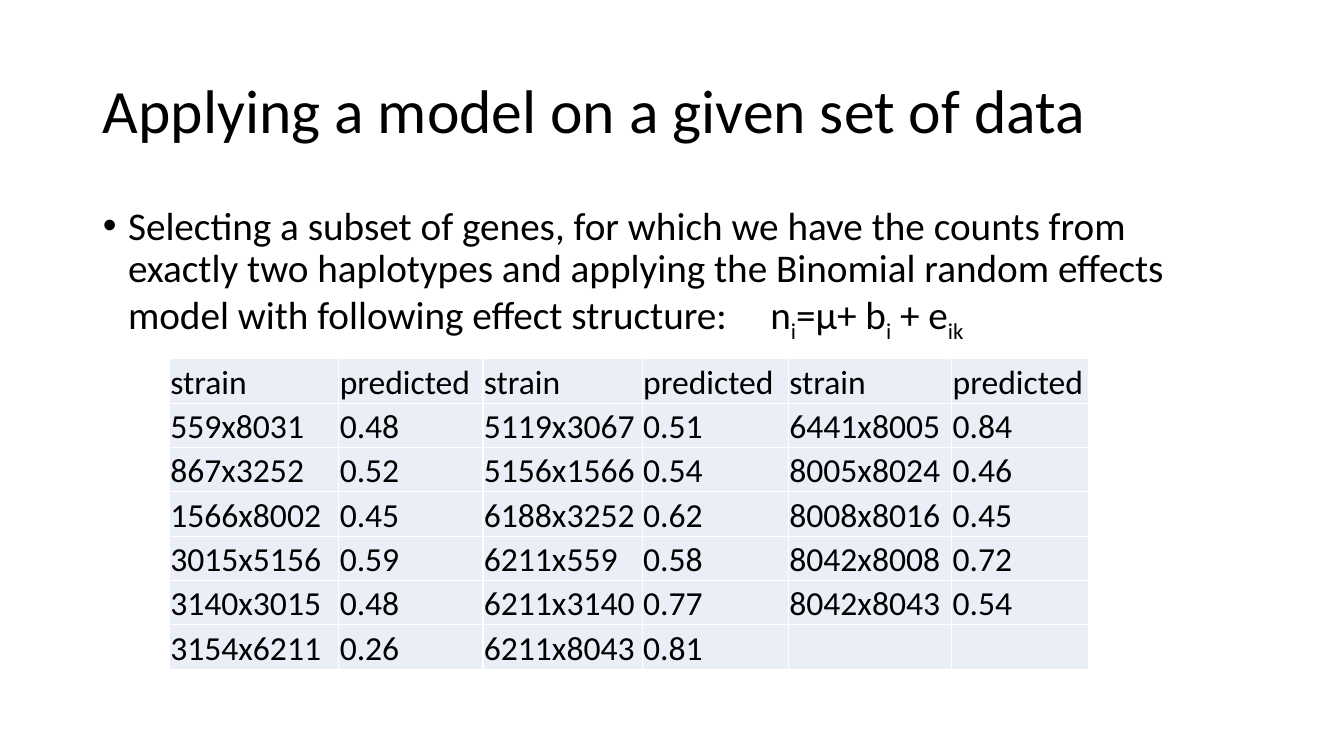
from lxml.etree import SubElement
from pptx import Presentation
from pptx.dml.color import RGBColor
from pptx.enum.text import MSO_ANCHOR, MSO_AUTO_SIZE, PP_ALIGN
from pptx.oxml.ns import qn
from pptx.util import Inches, Pt

# Content
TITLE = "Applying a model on a given set of data"
INTRO = ("Selecting a subset of genes, for which we have the counts from "
         "exactly two haplotypes and applying the Binomial random effects "
         "model with following effect structure:\t")
MODEL = [("n", "i"), ("=μ+ b", "i"), (" + e", "ik")]  # text, subscript
HEAD = ("strain", "predicted")
GROUPS = [
    [("559x8031", "0.48"), ("867x3252", "0.52"), ("1566x8002", "0.45"),
     ("3015x5156", "0.59"), ("3140x3015", "0.48"), ("3154x6211", "0.26")],
    [("5119x3067", "0.51"), ("5156x1566", "0.54"), ("6188x3252", "0.62"),
     ("6211x559", "0.58"), ("6211x3140", "0.77"), ("6211x8043", "0.81")],
    [("6441x8005", "0.84"), ("8005x8024", "0.46"), ("8008x8016", "0.45"),
     ("8042x8008", "0.72"), ("8042x8043", "0.54")],
]
COLS = [1.68, 1.43, 1.58, 1.45, 1.62, 1.36]
ROW = 0.44
FONT, INK, PALE, WHITE = "Calibri", "000000", "EAEFF7", "FFFFFF"


def color(code):
    return RGBColor.from_string(code)


def write(para, text, size, sub=False):
    run = para.add_run()
    run.text = text
    run.font.name = FONT
    run.font.size = Pt(size)
    run.font.color.rgb = color(INK)
    if sub:
        run.font._element.set("baseline", "-25000")


def place(shape, top, height, anchor):
    shape.left, shape.top = Inches(0.92), Inches(top)
    shape.width, shape.height = Inches(11.5), Inches(height)
    frame = shape.text_frame
    frame.auto_size = MSO_AUTO_SIZE.NONE
    frame.vertical_anchor = anchor
    para = frame.paragraphs[0]
    para.alignment = PP_ALIGN.LEFT
    para.line_spacing = 0.9
    return para


def border(cell):
    props = cell._tc.get_or_add_tcPr()
    for n, side in enumerate(("lnL", "lnR", "lnT", "lnB")):
        line = SubElement(props, qn("a:" + side), w=str(Pt(1)))
        fill = SubElement(line, qn("a:solidFill"))
        SubElement(fill, qn("a:srgbClr"), val=WHITE)
        props.insert(n, line)


deck = Presentation()
deck.slide_width, deck.slide_height = Inches(13.33), Inches(7.5)
slide = deck.slides.add_slide(deck.slide_layouts[1])

# Title
write(place(slide.shapes.title, 0.4, 1.45, MSO_ANCHOR.MIDDLE), TITLE, 44)

# Bullet with the model formula
para = place(slide.placeholders[1], 2, 4.76, MSO_ANCHOR.TOP)
para.space_before = Pt(10)
props = para._p.get_or_add_pPr()
props.set("marL", str(Inches(0.25)))
props.set("indent", str(-Inches(0.25)))
SubElement(props, qn("a:buFont"), typeface="Arial")
SubElement(props, qn("a:buChar"), char="•")
tabs = SubElement(props, qn("a:tabLst"))
SubElement(tabs, qn("a:tab"), pos=str(Inches(6.62)), algn="l")
write(para, INTRO, 28)
for text, sub in MODEL:
    write(para, text, 28)
    write(para, sub, 28, sub=True)

# Table: three strain/predicted pairs side by side
count = 1 + max(len(group) for group in GROUPS)
table = slide.shapes.add_table(
    count, len(COLS), Inches(1.68), Inches(3.56),
    Inches(sum(COLS)), Inches(ROW * count)).table
table.first_row = table.horz_banding = False
for col, width in zip(table.columns, COLS):
    col.width = Inches(width)
for r, row in enumerate(table.rows):
    row.height = Inches(ROW)
    for c, cell in enumerate(row.cells):
        cell.fill.solid()
        cell.fill.fore_color.rgb = color(PALE)
        cell.vertical_anchor = MSO_ANCHOR.BOTTOM
        cell.margin_left = cell.margin_right = cell.margin_top = Inches(0.01)
        cell.margin_bottom = 0
        border(cell)
        pairs = [HEAD] + GROUPS[c // 2]
        if r < len(pairs):
            write(cell.text_frame.paragraphs[0], pairs[r][c % 2], 24)

deck.save("out.pptx")
